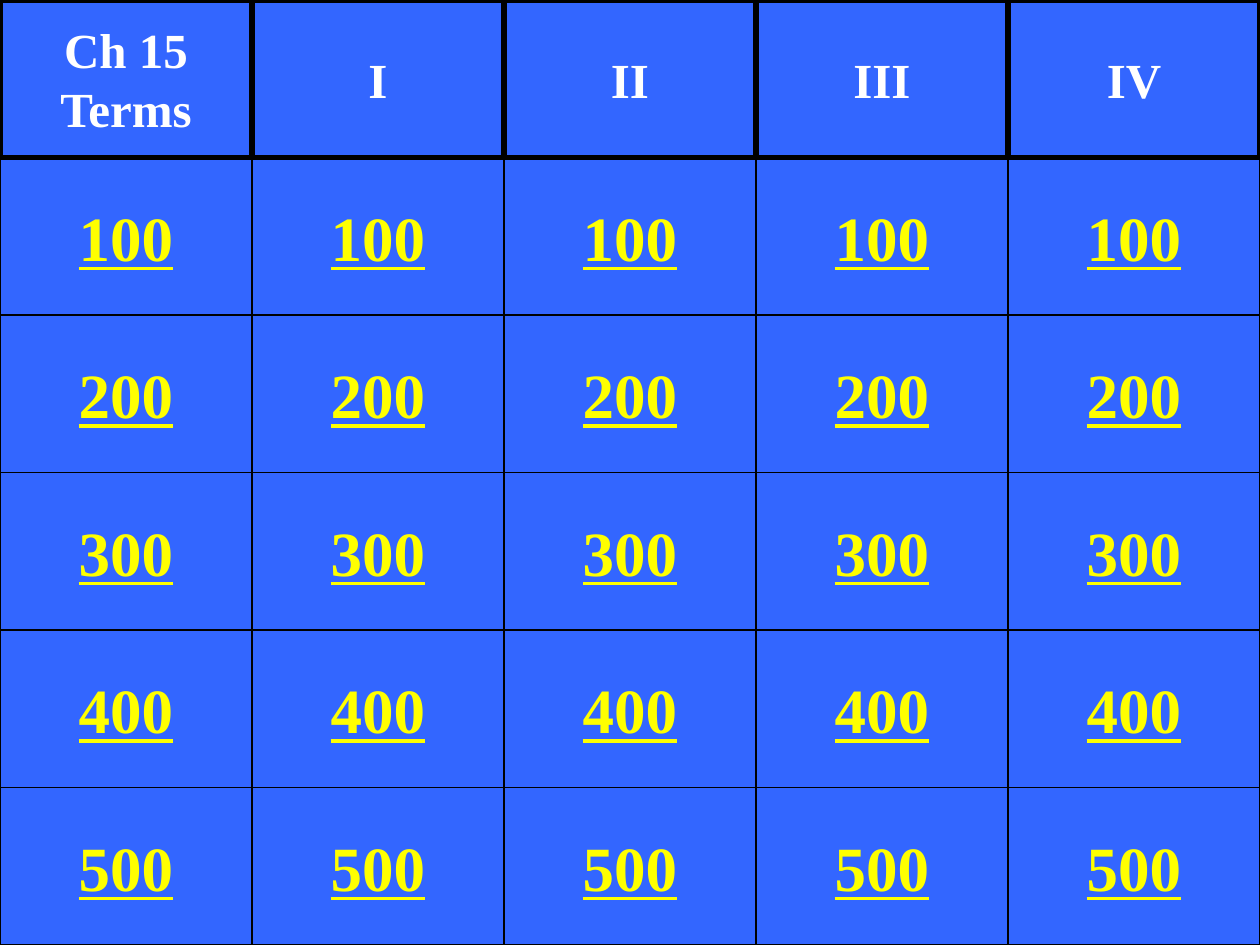
"""Build a quiz board: a row of category headers above a grid of point buttons."""
from pptx import Presentation
from pptx.dml.color import RGBColor
from pptx.enum.shapes import MSO_SHAPE as SHAPE
from pptx.enum.text import MSO_ANCHOR as ANCHOR, PP_ALIGN as ALIGN
from pptx.util import Inches, Pt

BLUE = RGBColor(0x33, 0x66, 0xFF)
BLACK = RGBColor(0, 0, 0)
WHITE = RGBColor(0xFF, 0xFF, 0xFF)
YELLOW = RGBColor(0xFF, 0xFF, 0)

CATEGORIES = ["Ch 15\nTerms", "I", "II", "III", "IV"]
POINTS = ["100", "200", "300", "400", "500"]
HEADER = {"name": "Times New Roman", "size": Pt(28), "bold": True}
BUTTON = {"name": "Times New Roman", "size": Pt(36), "bold": True, "underline": True}

prs = Presentation()
prs.slide_width, prs.slide_height = Inches(10), Inches(7.5)
CELL_W = prs.slide_width // len(CATEGORIES)
CELL_H = prs.slide_height // (len(POINTS) + 1)


def add_cell(s, kind, col, row, text, font, color, line_width):
    sp = s.shapes.add_shape(kind, col * CELL_W, row * CELL_H, CELL_W, CELL_H)
    sp.shadow.inherit = False
    sp.fill.solid()
    sp.fill.fore_color.rgb = BLUE
    sp.line.color.rgb = BLACK
    sp.line.width = Pt(line_width)
    tf = sp.text_frame
    tf.word_wrap = False
    tf.vertical_anchor = ANCHOR.MIDDLE
    tf.text = text
    for p in tf.paragraphs:
        p.alignment = ALIGN.CENTER
        for r in p.runs:
            r.font.color.rgb = color
            for key, value in font.items():
                setattr(r.font, key, value)


def main():
    s = prs.slides.add_slide(prs.slide_layouts[6])
    s.background.fill.solid()
    s.background.fill.fore_color.rgb = BLUE
    for col in range(len(CATEGORIES)):
        for row, points in enumerate(POINTS, 1):
            add_cell(s, SHAPE.ACTION_BUTTON_CUSTOM, col, row, points, BUTTON, YELLOW, 0.75)
    for col, category in enumerate(CATEGORIES):
        add_cell(s, SHAPE.RECTANGLE, col, 0, category, HEADER, WHITE, 3)
    prs.save("out.pptx")


if __name__ == "__main__":
    main()
